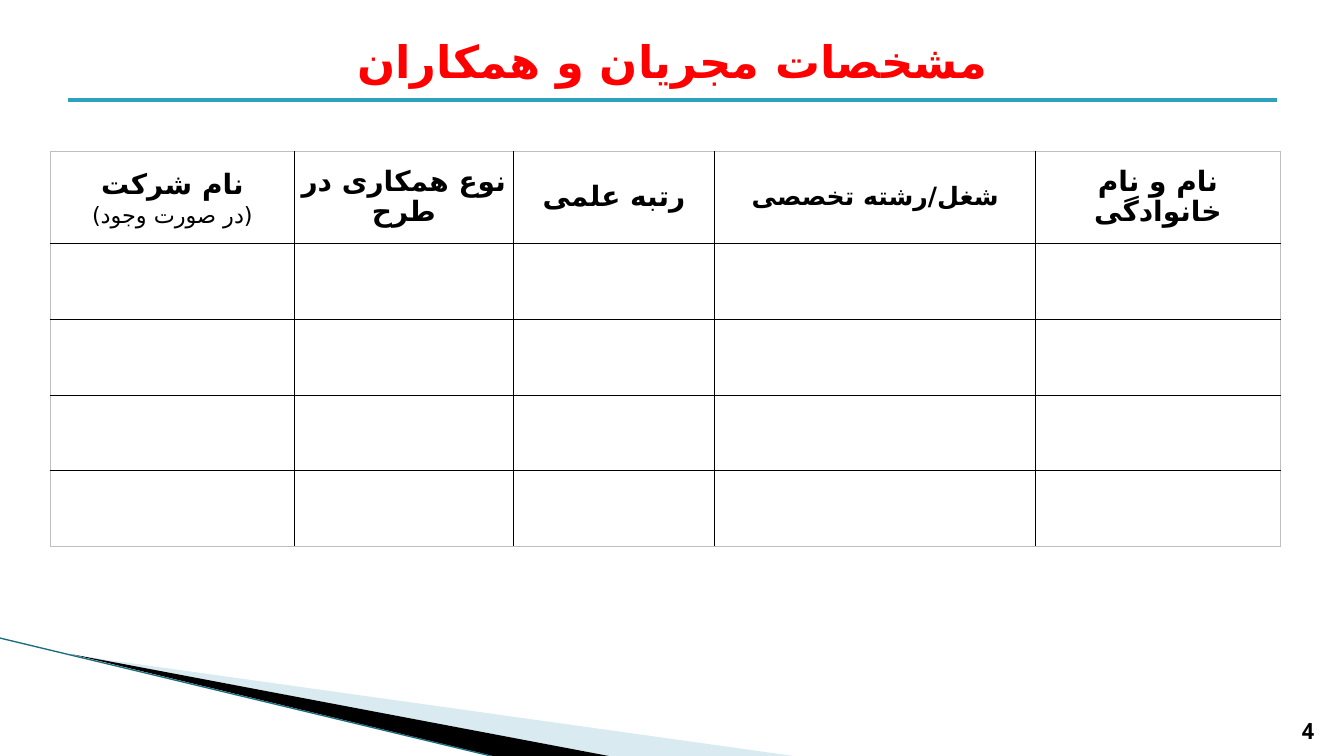
from lxml.etree import SubElement
from pptx import Presentation
from pptx.dml.color import RGBColor
from pptx.enum.shapes import MSO_CONNECTOR
from pptx.enum.text import MSO_ANCHOR, PP_ALIGN
from pptx.oxml.ns import qn
from pptx.util import Inches, Pt

COLORS = {
    "title": "FF0000", "text": "000000", "rule": "2DA2BF", "edge": "1A6E80",
    "pale": "A0CBDC", "dark": "000000", "paper": "FFFFFF",
    "grid": "000000", "frame": "BFBFBF",
}
PERSIAN_FONT = "DejaVu Sans"
TITLE = "مشخصات مجریان و همکاران"
PAGE_NUMBER = "4"
HEADERS = [
    [("نام شرکت", 20, "Calibri", True), ("(در صورت وجود)", 16, "Calibri", False)],
    [("نوع همکاری در طرح", 20, "Lato", True)],
    [("رتبه علمی", 20, "Lato", True)],
    [("شغل/رشته تخصصی", 18, "Noto Sans Mono", True)],
    [("نام و نام خانوادگی", 20, "Lato", True)],
]
COLUMN_WIDTHS = [2.42, 2.17, 2, 3.18, 2.43]
ROW_HEIGHTS = [0.92] + [0.75] * 4
WEDGES = [
    ([(0.73, 6.5), (7.87, 7.5), (6.04, 7.5)], "pale", 40),
    ([(0.71, 6.49), (6.04, 7.5), (4.89, 7.5)], "dark", 100),
]
LINES = [
    ((0, 6.33), (4.87, 7.5), "edge", 0.95),
    ((0.67, 0.99), (12.67, 0.99), "rule", 3),
]


def color(name):
    return RGBColor.from_string(COLORS[name])


def write(para, text, size, font, bold, ink="text", align=PP_ALIGN.CENTER, rtl=True):
    para.alignment = align
    if rtl:
        para._p.get_or_add_pPr().set("rtl", "1")
    span = para.add_run()
    span.text = text
    for name, value in {"size": Pt(size), "name": font, "bold": bold}.items():
        setattr(span.font, name, value)
    span.font.color.rgb = color(ink)
    if rtl:
        properties = span._r.get_or_add_rPr()
        properties.set("lang", "fa-IR")
        SubElement(properties, qn("a:cs"), typeface=PERSIAN_FONT)


def place(shape, left, top, width, height):
    for name, value in zip(("left", "top", "width", "height"), (left, top, width, height)):
        setattr(shape, name, Inches(value))


def add_wedge(page, points, fill, opacity):
    corners = [(Inches(x), Inches(y)) for x, y in points]
    builder = page.shapes.build_freeform(*corners[0], scale=1.0)
    builder.add_line_segments(corners[1:], close=True)
    wedge = builder.convert_to_shape()
    wedge.shadow.inherit = False
    wedge.fill.solid()
    wedge.fill.fore_color.rgb = color(fill)
    wedge.line.fill.background()
    if opacity < 100:
        tint = wedge._element.spPr.find(qn("a:solidFill"))[0]
        SubElement(tint, qn("a:alpha"), val=str(opacity * 1000))


def add_line(page, start, end, ink, width):
    ends = [Inches(value) for value in start + end]
    line = page.shapes.add_connector(MSO_CONNECTOR.STRAIGHT, *ends)
    line.line.color.rgb = color(ink)
    line.line.width = Pt(width)
    SubElement(line._element.spPr, qn("a:effectLst"))


def style_cell(cell, outer):
    properties = cell._tc.get_or_add_tcPr()
    for side in ("L", "R", "T", "B"):
        border = SubElement(properties, qn("a:ln" + side), w=str(Pt(1)))
        fill = SubElement(border, qn("a:solidFill"))
        ink = COLORS["frame" if side in outer else "grid"]
        SubElement(fill, qn("a:srgbClr"), val=ink)
    cell.fill.solid()
    cell.fill.fore_color.rgb = color("paper")
    cell.vertical_anchor = MSO_ANCHOR.MIDDLE
    cell.margin_left = cell.margin_right = Inches(0.07)
    cell.margin_top = cell.margin_bottom = 0


def add_people_table(page):
    rows, columns = len(ROW_HEIGHTS), len(COLUMN_WIDTHS)
    size = Inches(sum(COLUMN_WIDTHS)), Inches(sum(ROW_HEIGHTS))
    table = page.shapes.add_table(rows, columns, Inches(0.5), Inches(1.5), *size).table
    table.first_row = table.horz_banding = False
    for column, width in zip(table.columns, COLUMN_WIDTHS):
        column.width = Inches(width)
    for row, height in zip(table.rows, ROW_HEIGHTS):
        row.height = Inches(height)
    for r in range(rows):
        for c in range(columns):
            edges = {"L": c == 0, "R": c == columns - 1, "T": r == 0, "B": r == rows - 1}
            style_cell(table.cell(r, c), [side for side, on in edges.items() if on])
    for c, lines in enumerate(HEADERS):
        frame = table.cell(0, c).text_frame
        for index, line in enumerate(lines):
            para = frame.add_paragraph() if index else frame.paragraphs[0]
            para.line_spacing = 1.07 if len(lines) > 1 else 0.92
            write(para, *line)


def main():
    deck = Presentation()
    deck.slide_width, deck.slide_height = Inches(13.33), Inches(7.5)
    page = deck.slides.add_slide(deck.slide_layouts[5])
    for wedge in WEDGES:
        add_wedge(page, *wedge)
    for line in LINES:
        add_line(page, *line)

    number = page.shapes.add_textbox(0, 0, 0, 0)
    place(number, 11.78, 7.03, 1.36, 0.4)
    number.text_frame.word_wrap = True
    number.text_frame.vertical_anchor = MSO_ANCHOR.BOTTOM
    write(number.text_frame.paragraphs[0], PAGE_NUMBER, 16, "Noto Sans Mono", True,
          align=PP_ALIGN.RIGHT, rtl=False)

    title = page.shapes.title
    place(title, 0.67, 0.09, 12, 1.03)
    title.text_frame.vertical_anchor = MSO_ANCHOR.MIDDLE
    write(title.text_frame.paragraphs[0], TITLE, 32, "Times New Roman", True, "title")

    add_people_table(page)
    deck.save("out.pptx")


if __name__ == "__main__":
    main()
